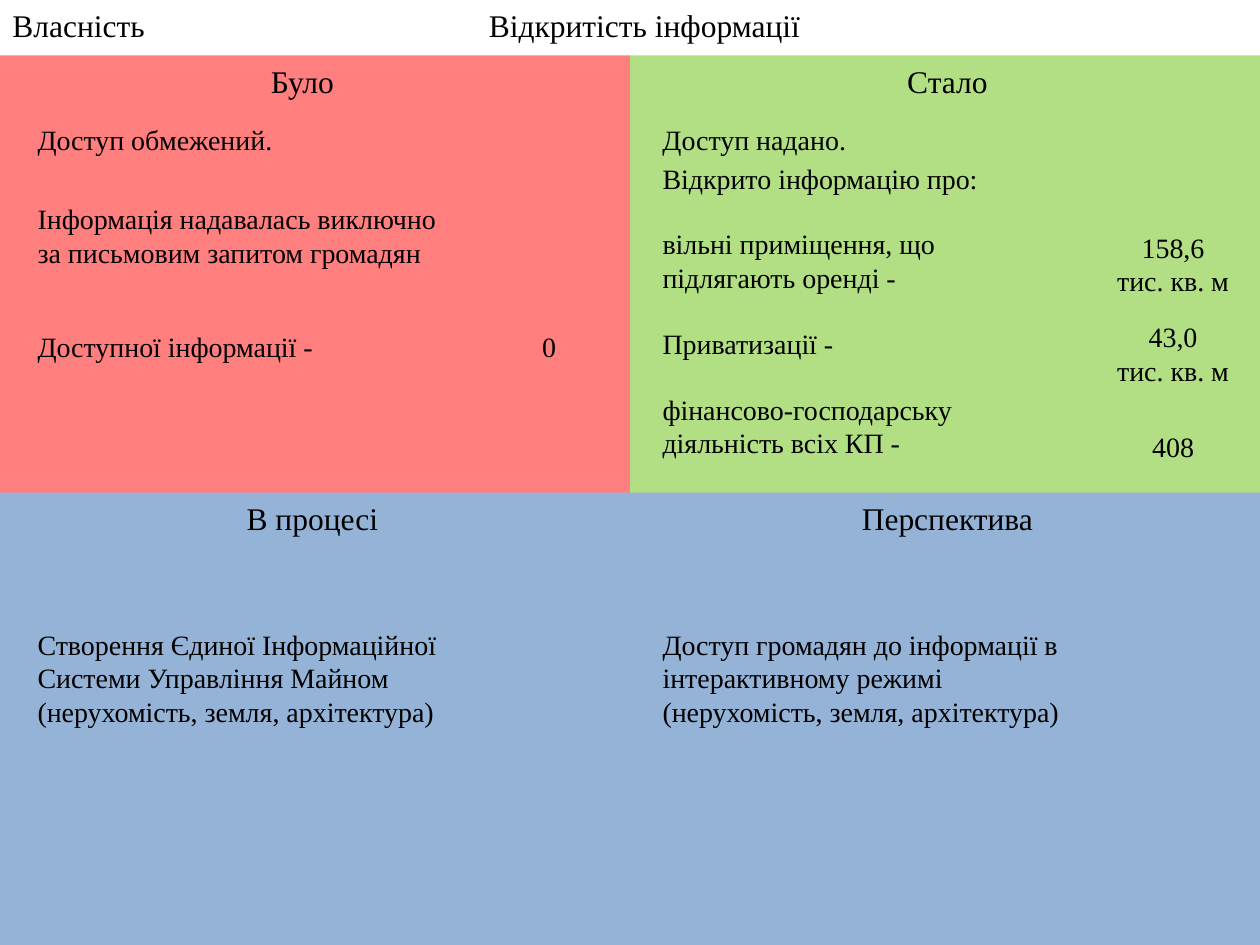
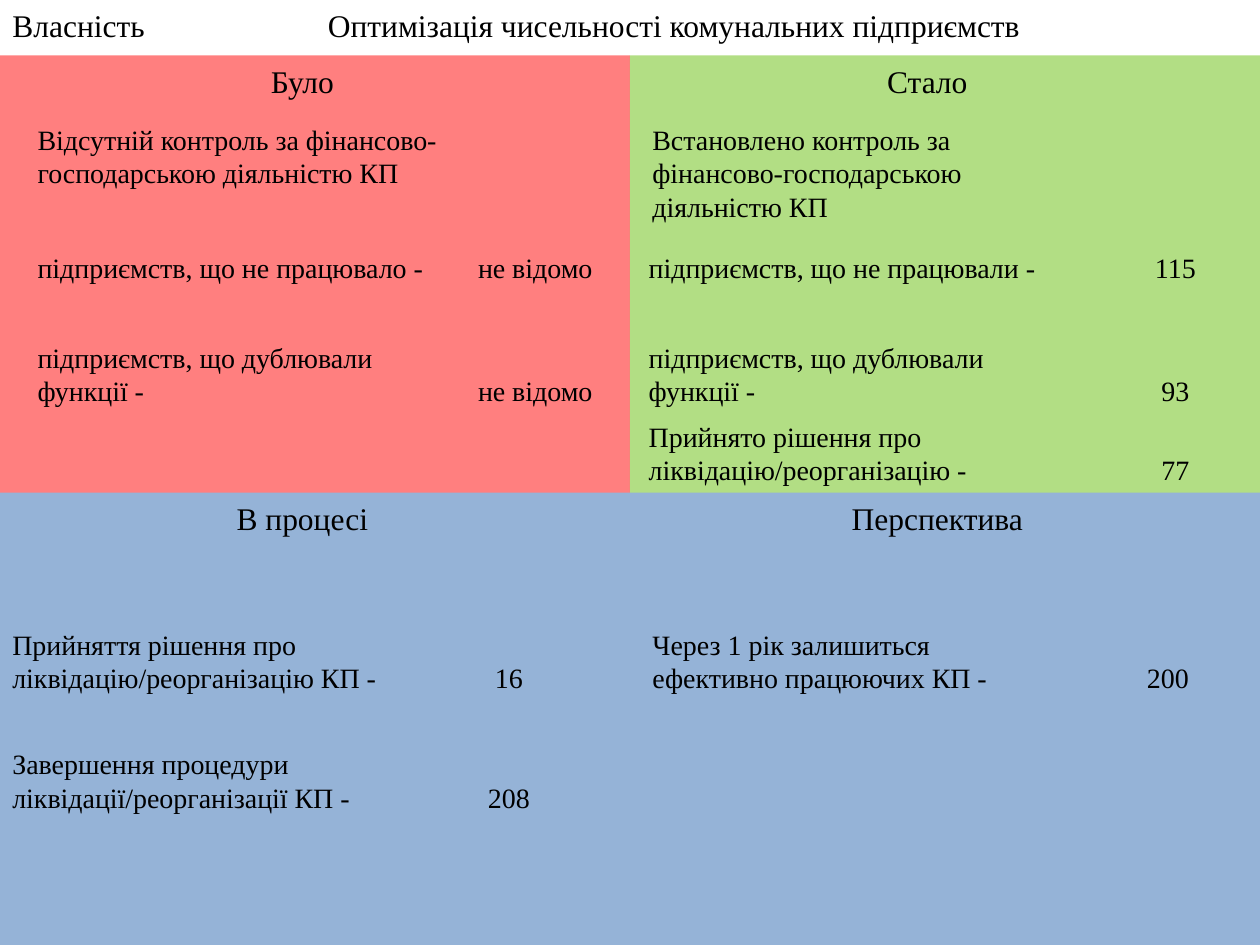
from lxml.etree import SubElement
from pptx import Presentation
from pptx.dml.color import RGBColor
from pptx.enum.shapes import MSO_SHAPE as Shape
from pptx.enum.text import MSO_ANCHOR as Anchor, MSO_AUTO_SIZE as AutoSize, PP_ALIGN as Align
from pptx.oxml.ns import qn
from pptx.util import Inches, Pt

# The slide is a grid of 100 columns and 75 rows of square cells.
COLUMNS, ROWS = 100, 75
CELL = Inches(0.1)

MIDDLE = COLUMNS / 2
UPPER, LOWER = 4.4, 39.1
UPPER_HEIGHT = 37
UPPER_TEXT, LOWER_TEXT = UPPER + 4.8, LOWER + 10.2
HEADING_WIDTH, HEADING_HEIGHT = 23.6, 4
LINE, INSET, PADDING = 2.7, 1, 0.5
LEFT_MARGIN = 2
VALUE_LEFT, VALUE_WIDTH = 86.2, 13.8

FONT = "Times New Roman"
HEADING_SIZE, TEXT_SIZE = 18, 16
BLANK_LINE = 18.4

BLACK = RGBColor(0x00, 0x00, 0x00)
RED = RGBColor(0xFF, 0x00, 0x00)
GREEN = RGBColor(0x92, 0xD0, 0x50)
BLUE = RGBColor(0x95, 0xB3, 0xD7)


def cells(*counts):
    return [round(count * CELL) for count in counts]


def add_panel(slide, left, top, height, color, opacity=100):
    panel = slide.shapes.add_shape(Shape.RECTANGLE, *cells(left, top, MIDDLE, height))
    panel.shadow.inherit = False
    panel.line.fill.background()
    panel.fill.solid()
    panel.fill.fore_color.rgb = color
    if opacity < 100:
        srgb = panel.fill._xPr.find(qn("a:solidFill")).find(qn("a:srgbClr"))
        SubElement(srgb, qn("a:alpha"), val=str(opacity * 1000))


def add_centre_tab(paragraph, position):
    tabs = SubElement(paragraph._p.get_or_add_pPr(), qn("a:tabLst"))
    SubElement(tabs, qn("a:tab"), pos=str(cells(position)[0]), algn="ctr")


def write(shape, text, size=TEXT_SIZE, align=Align.LEFT, gap=0, tab=None):
    """Fill a shape with one paragraph a line; gap separates paragraphs after the first."""
    frame = shape.text_frame
    frame.word_wrap = True
    frame.vertical_anchor = Anchor.TOP
    frame.margin_left, frame.margin_right = cells(INSET, INSET)
    frame.margin_top, frame.margin_bottom = cells(PADDING, PADDING)
    frame.text = text
    for index, paragraph in enumerate(frame.paragraphs):
        paragraph.alignment = align
        paragraph.space_before = Pt(gap if index else 0)
        if tab is not None:
            add_centre_tab(paragraph, tab)
        for run in paragraph.runs:
            run.font.name, run.font.size = FONT, Pt(size)
            run.font.color.rgb = BLACK
    frame.auto_size = AutoSize.SHAPE_TO_FIT_TEXT


def add_text(slide, text, left, top, width, lines=1, value_at=None, **style):
    """Add body text; value_at is the grid column on which tabbed values are centred."""
    box = slide.shapes.add_textbox(*cells(left, top, width, lines * LINE + 2 * PADDING))
    tab = None if value_at is None else value_at - left - INSET
    write(box, text, tab=tab, **style)


def add_heading(slide, text, left, top, width=HEADING_WIDTH, align=Align.CENTER):
    box = slide.shapes.add_textbox(*cells(left, top, width, HEADING_HEIGHT))
    write(box, text, size=HEADING_SIZE, align=align)


def add_matrix_slide(prs, topic, topic_left, topic_width, heading_lefts):
    """Start a slide with its title, four panels and their headings."""
    slide = prs.slides.add_slide(prs.slide_layouts[5])
    add_panel(slide, 0, UPPER, UPPER_HEIGHT, RED, opacity=50)
    add_panel(slide, MIDDLE, UPPER, UPPER_HEIGHT, GREEN, opacity=70)
    for left in (0, MIDDLE):
        add_panel(slide, left, LOWER, ROWS - LOWER, BLUE)

    title = slide.shapes.title
    title.left, title.top, title.width, title.height = cells(
        topic_left, 0, topic_width, HEADING_HEIGHT)
    write(title, topic, size=HEADING_SIZE, align=Align.CENTER)
    add_heading(slide, "Власність", 0, 0, 24.8, Align.LEFT)

    headings = ("Було", "Стало", "В процесі", "Перспектива")
    tops = (UPPER, UPPER, LOWER, LOWER)
    for heading, left, top in zip(headings, heading_lefts, tops):
        add_heading(slide, heading, left, top)
    return slide


def add_openness_slide(prs):
    slide = add_matrix_slide(prs, "Відкритість інформації", 34.8, 32.7,
                             (12.2, 63.4, 13, 63.4))
    right = 51.6
    add_text(slide, "Доступ обмежений.", LEFT_MARGIN, UPPER_TEXT, 21.3)
    add_text(slide, "Інформація надавалась виключно за письмовим запитом громадян",
             LEFT_MARGIN, 15.5, 33.9, lines=2)
    add_text(slide, "Доступної інформації -\t0", LEFT_MARGIN, 25.7, 47.2, value_at=43.6)

    add_text(slide, "Доступ надано.", right, UPPER_TEXT, 21.3)
    add_text(slide, "Відкрито інформацію про:\n"
                    "вільні приміщення, що підлягають оренді -\n"
                    "Приватизації -\n"
                    "фінансово-господарську діяльність всіх КП -",
             right, 12.3, 33.1, lines=10, gap=BLANK_LINE)
    for value, top, lines in (("158,6\nтис. кв. м", 17.8, 2),
                              ("43,0\nтис. кв. м", 24.9, 2),
                              ("408", 33.6, 1)):
        add_text(slide, value, VALUE_LEFT, top, VALUE_WIDTH, lines, align=Align.CENTER)

    assets = "(нерухомість, земля, архітектура)"
    add_text(slide, f"Створення Єдиної Інформаційної Системи Управління Майном\n{assets}",
             LEFT_MARGIN, LOWER_TEXT, 36.6, lines=3)
    add_text(slide, f"Доступ громадян до інформації в інтерактивному режимі\n{assets}",
             right, LOWER_TEXT, 36.2, lines=3)


def add_enterprises_slide(prs):
    slide = add_matrix_slide(prs, "Оптимізація чисельності комунальних підприємств",
                             22.4, 62.2, (12.2, 61.8, 12.2, 62.6))
    right, right_counts = 50.8, 50.5
    idle_top, duplicate_top, closing_top = 19.4, 26.5, 32.8

    add_text(slide, "Відсутній контроль за фінансово-господарською діяльністю КП",
             LEFT_MARGIN, UPPER_TEXT, 34.6, lines=2)
    add_text(slide, "Встановлено контроль за фінансово-господарською діяльністю КП",
             right, UPPER_TEXT, 35.4, lines=3)

    counts = (
        ("підприємств, що не працювало -\tне відомо", LEFT_MARGIN, idle_top, 42.5),
        ("підприємств, що дублювали\nфункції -\tне відомо", LEFT_MARGIN, duplicate_top, 42.5),
        ("підприємств, що не працювали -\t115", right_counts, idle_top, 93.3),
        ("підприємств, що дублювали\nфункції -\t93", right_counts, duplicate_top, 93.3),
        ("Прийнято рішення про\nліквідацію/реорганізацію -\t77",
         right_counts, closing_top, 93.3),
        ("Прийняття рішення про\nліквідацію/реорганізацію КП -\t16", 0, LOWER_TEXT, 40.4),
        ("Завершення процедури\nліквідації/реорганізації КП -\t208", 0, 58.8, 40.4),
        ("Через 1 рік залишиться\nефективно працюючих КП -\t200", right, LOWER_TEXT, 92.7),
    )
    for text, left, top, value_at in counts:
        panel_end = MIDDLE if left < MIDDLE else COLUMNS
        add_text(slide, text, left, top, panel_end - left,
                 lines=text.count("\n") + 1, value_at=value_at)


def main():
    prs = Presentation()
    prs.slide_width, prs.slide_height = cells(COLUMNS, ROWS)
    add_openness_slide(prs)
    add_enterprises_slide(prs)
    prs.save("out.pptx")


if __name__ == "__main__":
    main()
